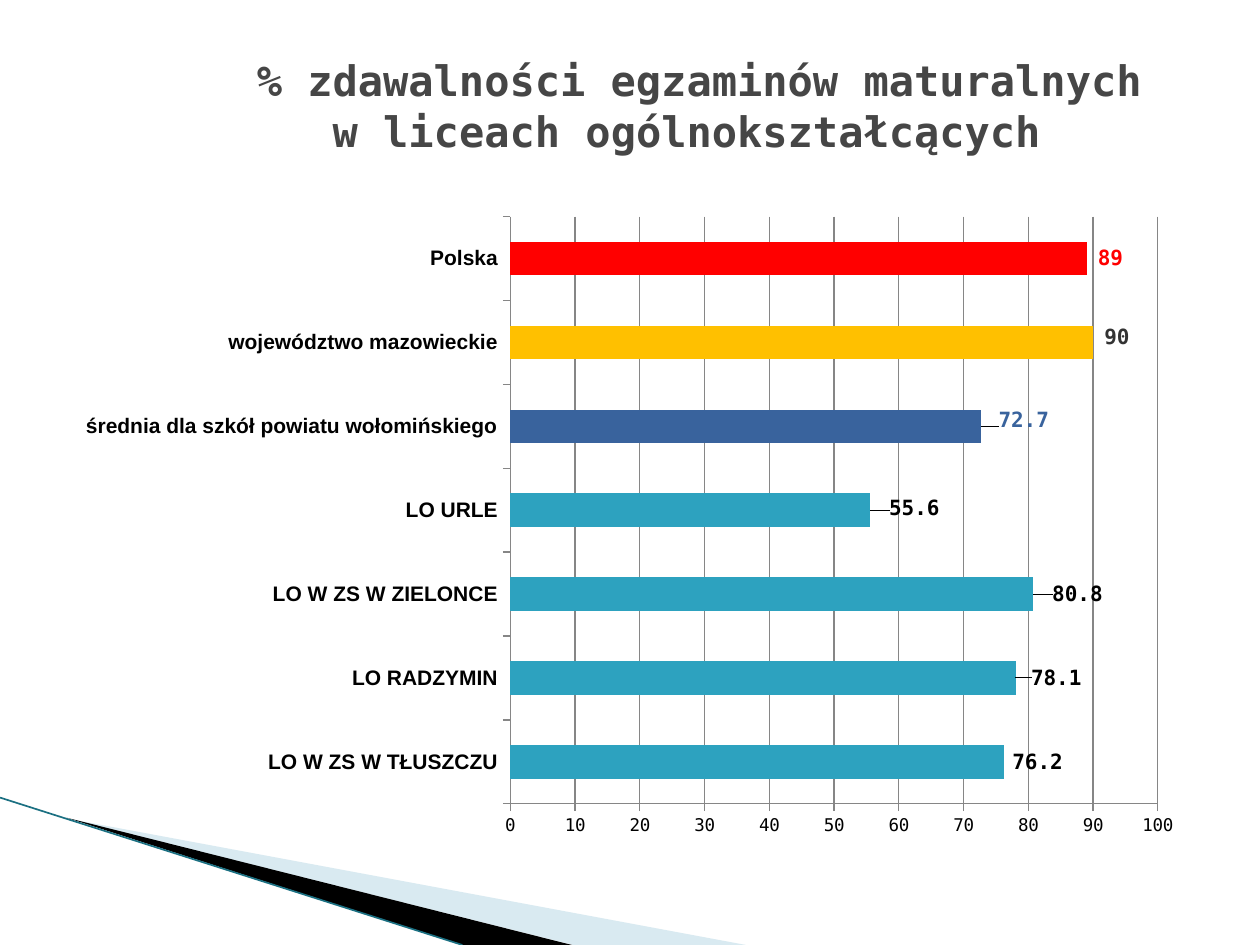
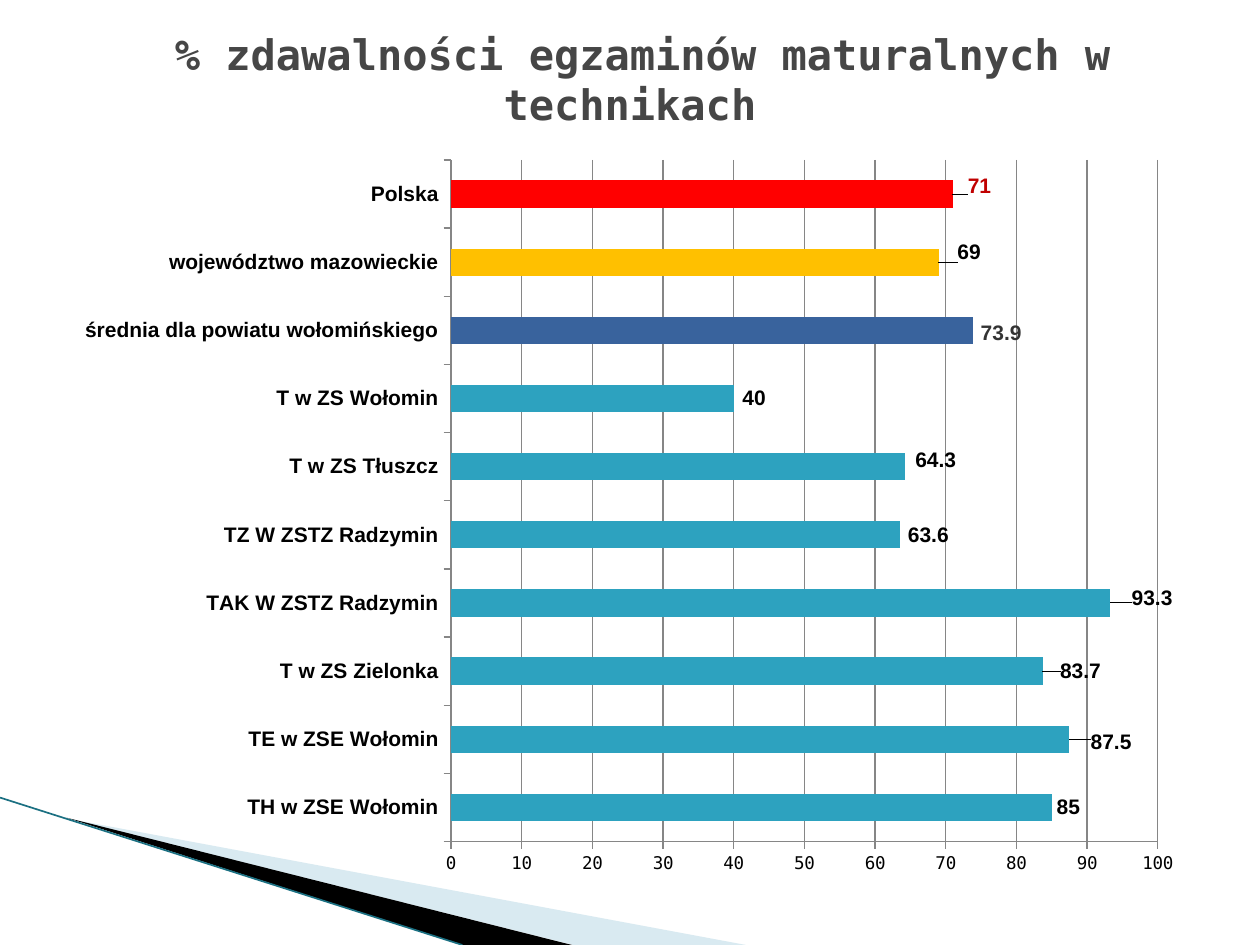
from dataclasses import dataclass

from lxml.etree import SubElement
from pptx import Presentation
from pptx.chart.data import CategoryChartData
from pptx.chart.series import BarSeries
from pptx.dml.color import RGBColor
from pptx.enum.chart import XL_CHART_TYPE, XL_LABEL_POSITION, XL_TICK_MARK
from pptx.enum.shapes import MSO_CONNECTOR
from pptx.enum.text import MSO_ANCHOR, PP_ALIGN
from pptx.oxml import parse_xml
from pptx.oxml.ns import nsdecls, qn
from pptx.slide import Slide
from pptx.text.text import Font
from pptx.util import Inches, Pt

COLORS = {
    "title": "464646",
    "black": "000000",
    "grid": "868686",
    "band": "A0CBDC",
    "edge": "1B7082",
    "school": "2DA2BF",
    "county": "39639D",
    "province": "FFC000",
    "country": "FF0000",
    "dark_red": "C00000",
    "dark_gray": "333333",
}
MONO = "DejaVu Sans Mono"
SANS = "Arial"


@dataclass(frozen=True)
class Box:
    left: float
    top: float
    width: float
    height: float


@dataclass(frozen=True)
class Bar:
    category: str
    value: float
    shift_x: float = 0
    shift_y: float = 0
    fill: str = "school"
    label: str = "black"


@dataclass(frozen=True)
class Wedge:
    points: tuple[tuple[float, float], ...]
    color: str
    opacity: int = 100


@dataclass(frozen=True)
class ResultsSlide:
    title_lines: tuple[str, ...]
    title_box: Box
    chart_box: Box
    plot_box: Box
    label_font: str
    bars: tuple[Bar, ...]


WEDGES = (
    Wedge(((0.55, 6.5), (5.92, 7.5), (4.55, 7.5)), "band", 40),
    Wedge(((0.53, 6.49), (4.54, 7.5), (3.67, 7.5)), "black"),
)

RESULTS = (
    ResultsSlide(
        ("% zdawalności egzaminów maturalnych", "w liceach ogólnokształcących "),
        Box(1.3, 0.21, 8.5, 1.25),
        Box(0.5, 1.62, 8.99, 5.12),
        Box(4.05, 1.72, 5.14, 4.66),
        MONO,
        (
            Bar("LO W ZS W TŁUSZCZU", 76.2, 0.03),
            Bar("LO RADZYMIN", 78.1, 0.08),
            Bar("LO W ZS W ZIELONCE", 80.8, 0.11),
            Bar("LO URLE", 55.6, 0.11, -0.02),
            Bar("średnia dla szkół powiatu wołomińskiego", 72.7, 0.1, -0.05,
                "county", "county"),
            Bar("województwo mazowieckie", 90, 0.05, -0.04, "province", "dark_gray"),
            Bar("Polska", 89, 0.05, 0, "country", "country"),
        ),
    ),
    ResultsSlide(
        ("% zdawalności egzaminów maturalnych w technikach ",),
        Box(0.2, 0, 9.8, 1.25),
        Box(0.5, 1.15, 9, 5.91),
        Box(3.58, 1.27, 5.61, 5.41),
        SANS,
        (
            Bar("TH w ZSE Wołomin", 85),
            Bar("TE w ZSE Wołomin", 87.5, 0.13, 0.02),
            Bar("T w ZS Zielonka", 83.7, 0.1),
            Bar("TAK W ZSTZ Radzymin", 93.3, 0.13, -0.04),
            Bar("TZ W ZSTZ Radzymin", 63.6, 0.02),
            Bar("T w ZS Tłuszcz", 64.3, 0.04, -0.05),
            Bar("T w ZS Wołomin", 40, 0.03),
            Bar("średnia dla powiatu wołomińskiego", 73.9, 0.02, 0.02,
                "county", "dark_gray"),
            Bar("województwo mazowieckie", 69, 0.11, -0.08, "province"),
            Bar("Polska", 71, 0.08, -0.06, "country", "dark_red"),
        ),
    ),
)


def rgb(name: str) -> RGBColor:
    return RGBColor.from_string(COLORS[name])


def format_font(font: Font, name: str, size: float, color: str, bold: bool) -> None:
    font.name = name
    font.size = Pt(size)
    font.bold = bold
    font.color.rgb = rgb(color)


def add_wedge(slide: Slide, wedge: Wedge) -> None:
    start, *others = [(Inches(x), Inches(y)) for x, y in wedge.points]
    builder = slide.shapes.build_freeform(*start)
    builder.add_line_segments(others)
    shape = builder.convert_to_shape()
    shape.shadow.inherit = False
    shape.fill.solid()
    shape.fill.fore_color.rgb = rgb(wedge.color)
    shape.line.fill.background()
    if wedge.opacity < 100:
        color = shape.fill._xPr.find(".//" + qn("a:srgbClr"))
        SubElement(color, qn("a:alpha"), val=str(wedge.opacity * 1000))


def add_corner(slide: Slide) -> None:
    for wedge in WEDGES:
        add_wedge(slide, wedge)
    edge = slide.shapes.add_connector(
        MSO_CONNECTOR.STRAIGHT, Inches(0), Inches(6.33), Inches(3.67), Inches(7.5)
    )
    edge.line.color.rgb = rgb("edge")
    edge.line.width = Pt(0.95)
    SubElement(edge._element.spPr, qn("a:effectLst"))


def set_title(slide: Slide, lines: tuple[str, ...], box: Box) -> None:
    title = slide.shapes.title
    title.left, title.top = Inches(box.left), Inches(box.top)
    title.width, title.height = Inches(box.width), Inches(box.height)
    title.text_frame.word_wrap = True
    title.text_frame.vertical_anchor = MSO_ANCHOR.MIDDLE
    paragraph = title.text_frame.paragraphs[0]
    paragraph.alignment = PP_ALIGN.CENTER
    for index, line in enumerate(lines):
        if index:
            paragraph.add_line_break()
        run = paragraph.add_run()
        run.text = line
        format_font(run.font, MONO, 24, "title", True)


def manual_layout(x: float, y: float, extra: str = "", size: str = ""):
    return parse_xml(
        f"<c:layout {nsdecls('c')}><c:manualLayout>{extra}"
        f'<c:x val="{x:.4f}"/><c:y val="{y:.4f}"/>{size}'
        "</c:manualLayout></c:layout>"
    )


def place_plot(chart, plot_box: Box, chart_box: Box) -> None:
    plot_area = chart._chartSpace.chart.plotArea
    for layout in plot_area.findall(qn("c:layout")):
        plot_area.remove(layout)
    modes = (
        '<c:layoutTarget val="inner"/>'
        '<c:xMode val="edge"/><c:yMode val="edge"/>'
    )
    size = (
        f'<c:w val="{plot_box.width / chart_box.width:.4f}"/>'
        f'<c:h val="{plot_box.height / chart_box.height:.4f}"/>'
    )
    x = (plot_box.left - chart_box.left) / chart_box.width
    y = (plot_box.top - chart_box.top) / chart_box.height
    plot_area.insert(0, manual_layout(x, y, modes, size))


def format_axes(chart) -> None:
    for axis in (chart.category_axis, chart.value_axis):
        axis.major_tick_mark = XL_TICK_MARK.OUTSIDE
        axis.minor_tick_mark = XL_TICK_MARK.NONE
        axis.format.line.color.rgb = rgb("grid")
    chart.category_axis.has_major_gridlines = False
    format_font(chart.category_axis.tick_labels.font, SANS, 12, "black", True)
    value_axis = chart.value_axis
    value_axis.minimum_scale = 0
    value_axis.maximum_scale = 100
    value_axis.major_unit = 10
    value_axis.has_major_gridlines = True
    value_axis.major_gridlines.format.line.color.rgb = rgb("grid")
    format_font(value_axis.tick_labels.font, MONO, 10, "black", False)


def format_bar(series: BarSeries, index: int, bar: Bar, results: ResultsSlide) -> None:
    point = series.points[index]
    if bar.fill != "school":
        point.format.fill.solid()
        point.format.fill.fore_color.rgb = rgb(bar.fill)
    if bar.shift_x:
        label = point.data_label
        format_font(label.font, results.label_font, 12, bar.label, True)
        label.position = XL_LABEL_POSITION.OUTSIDE_END
        element = series._element.find(f".//{qn('c:dLbl')}[{qn('c:idx')}][@val]")
        for element in series._element.iter(qn("c:dLbl")):
            position = element.find(qn("c:idx"))
            if position.get("val") == str(index):
                position.addnext(manual_layout(
                    bar.shift_x / results.chart_box.width,
                    bar.shift_y / results.chart_box.height,
                ))


def add_results_chart(slide: Slide, results: ResultsSlide) -> None:
    data = CategoryChartData()
    data.categories = [bar.category for bar in results.bars]
    data.add_series("Series 1", [bar.value for bar in results.bars])
    box = results.chart_box
    chart = slide.shapes.add_chart(
        XL_CHART_TYPE.BAR_CLUSTERED, Inches(box.left), Inches(box.top),
        Inches(box.width), Inches(box.height), data,
    ).chart
    chart.has_legend = False
    chart.has_title = False
    format_font(chart.font, MONO, 10, "black", False)
    place_plot(chart, results.plot_box, box)
    format_axes(chart)
    plot = chart.plots[0]
    plot.gap_width = 150
    plot.vary_by_categories = False
    series = plot.series[0]
    series.format.fill.solid()
    series.format.fill.fore_color.rgb = rgb("school")
    labels = series.data_labels
    labels.show_value = True
    labels.position = XL_LABEL_POSITION.OUTSIDE_END
    format_font(labels.font, results.label_font, 12, "black", True)
    for index, bar in enumerate(results.bars):
        format_bar(series, index, bar, results)


def main() -> None:
    presentation = Presentation()
    presentation.slide_width = Inches(10)
    presentation.slide_height = Inches(7.5)
    for results in RESULTS:
        slide = presentation.slides.add_slide(presentation.slide_layouts[5])
        add_corner(slide)
        set_title(slide, results.title_lines, results.title_box)
        add_results_chart(slide, results)
    presentation.save("out.pptx")


if __name__ == "__main__":
    main()
